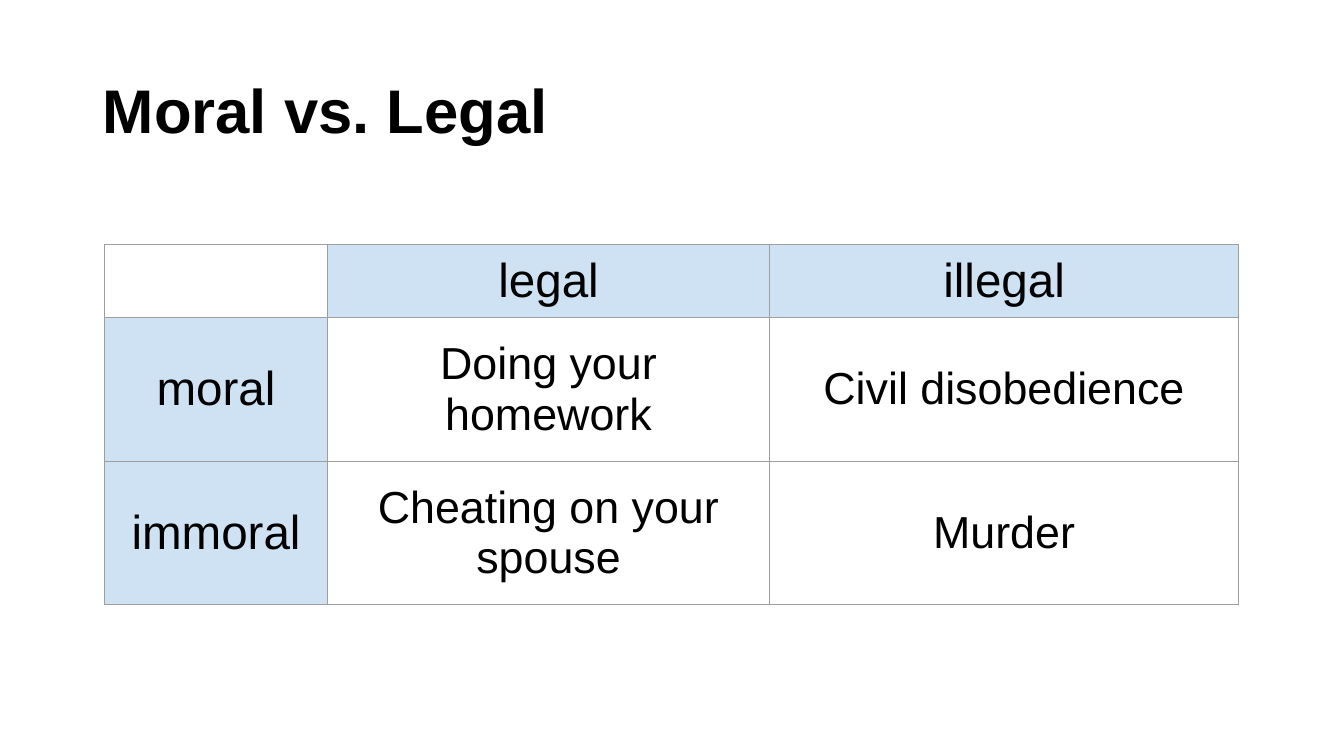
from lxml.etree import SubElement
from pptx import Presentation
from pptx.dml.color import RGBColor
from pptx.enum.text import MSO_ANCHOR, PP_ALIGN
from pptx.oxml.ns import qn
from pptx.util import Cm, Pt

BLACK = RGBColor(0x00, 0x00, 0x00)
LIGHT_BLUE = RGBColor(0xCF, 0xE2, 0xF3)
BORDER_GRAY = RGBColor(0x9E, 0x9E, 0x9E)

COLUMN_WIDTHS = [5.61, 11.15, 11.81]
ROW_HEIGHTS = [1.7, 3.61, 3.61]
CELL_TEXTS = [
    ["", "legal", "illegal"],
    ["moral", "Doing your homework", "Civil disobedience"],
    ["immoral", "Cheating on your spouse", "Murder"],
]


def write_text(text_frame, text, size=32, bold=False, align=PP_ALIGN.LEFT, line_spacing=1.0):
    paragraph = text_frame.paragraphs[0]
    paragraph.alignment = align
    paragraph.line_spacing = line_spacing
    run = paragraph.add_run()
    run.text = text
    run.font.name = "Arial"
    run.font.size = Pt(size)
    run.font.bold = bold
    run.font.color.rgb = BLACK


class SlideBuilder:
    """Holds the style and the current slide."""

    def __init__(self, slide, header_fill, border_color):
        self.slide = slide
        self.header_fill = header_fill
        self.border_color = border_color

    def add_title(self, text, left, top, width, height):
        title = self.slide.shapes.title
        title.left, title.top = Cm(left), Cm(top)
        title.width, title.height = Cm(width), Cm(height)
        title.text_frame.vertical_anchor = MSO_ANCHOR.MIDDLE
        write_text(title.text_frame, text, size=44, bold=True, line_spacing=0.9)

    def add_matrix(self, texts, left, top, column_widths, row_heights):
        table = self.slide.shapes.add_table(
            len(row_heights), len(column_widths), Cm(left), Cm(top),
            Cm(sum(column_widths)), Cm(sum(row_heights))).table
        table.first_row = False
        table.horz_banding = False
        for column, width in zip(table.columns, column_widths):
            column.width = Cm(width)
        for row, height in zip(table.rows, row_heights):
            row.height = Cm(height)
        for row_index, row_texts in enumerate(texts):
            for column_index, text in enumerate(row_texts):
                self.format_cell(table.cell(row_index, column_index), text,
                                 row_index, column_index)

    def format_cell(self, cell, text, row_index, column_index):
        cell.margin_left = cell.margin_right = Cm(0.25)
        cell.margin_top = cell.margin_bottom = Cm(0.25)
        cell.vertical_anchor = MSO_ANCHOR.MIDDLE if row_index else MSO_ANCHOR.TOP
        self.add_borders(cell)
        is_header = bool(text) and 0 in (row_index, column_index)
        if is_header:
            cell.fill.solid()
            cell.fill.fore_color.rgb = self.header_fill
        else:
            cell.fill.background()
        if text:
            write_text(cell.text_frame, text, size=34 if is_header else 32,
                       align=PP_ALIGN.CENTER)

    def add_borders(self, cell):
        properties = cell._tc.get_or_add_tcPr()
        for side in ("a:lnL", "a:lnR", "a:lnT", "a:lnB"):
            line = SubElement(properties, qn(side), w=str(Pt(0.75)))
            fill = SubElement(line, qn("a:solidFill"))
            SubElement(fill, qn("a:srgbClr"), val=str(self.border_color))


def main():
    presentation = Presentation()
    presentation.slide_width = Cm(33.87)
    presentation.slide_height = Cm(19.05)
    title_only_layout = presentation.slide_layouts[5]
    slide = presentation.slides.add_slide(title_only_layout)
    builder = SlideBuilder(slide, LIGHT_BLUE, BORDER_GRAY)

    # Title
    builder.add_title("Moral vs. Legal", 2.34, 1.02, 29.21, 3.68)

    # Matrix of moral against legal
    builder.add_matrix(CELL_TEXTS, 2.64, 6.17, COLUMN_WIDTHS, ROW_HEIGHTS)

    presentation.save("out.pptx")


if __name__ == "__main__":
    main()
